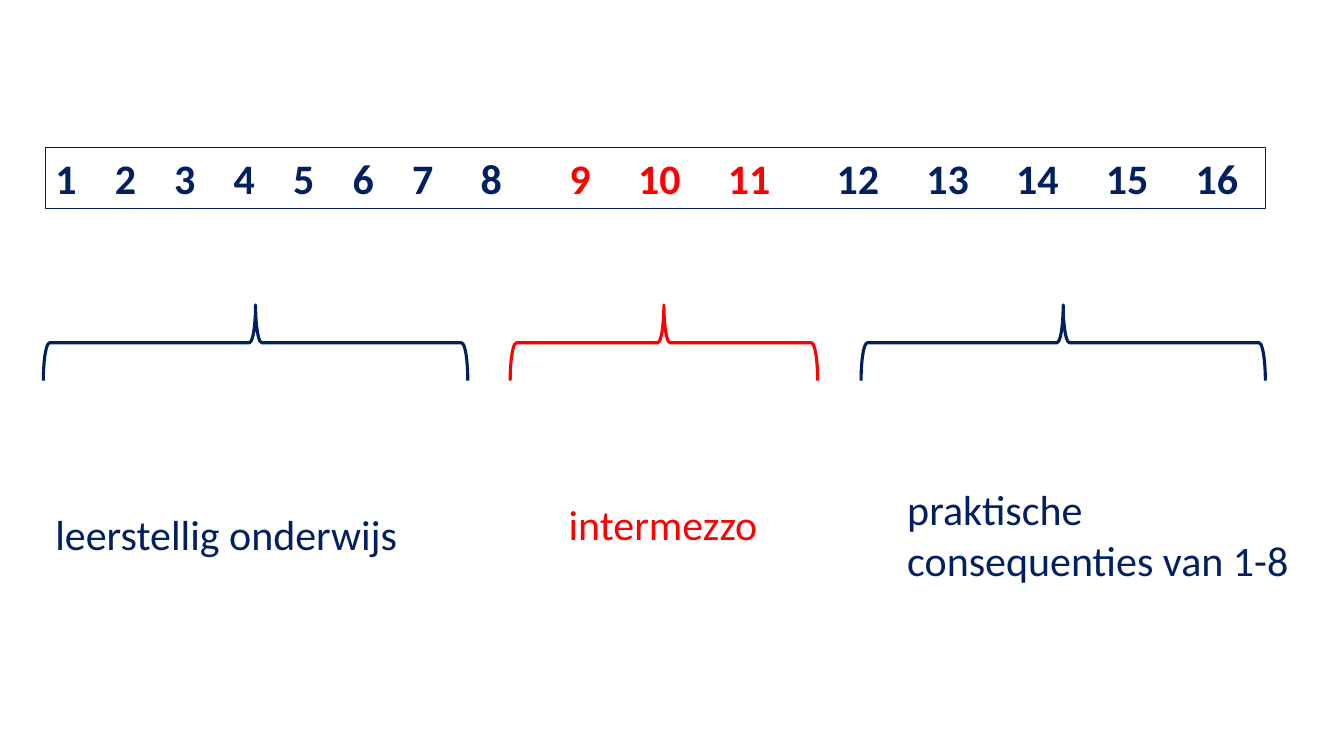
from lxml import etree
from pptx import Presentation
from pptx.dml.color import RGBColor
from pptx.enum.shapes import MSO_SHAPE
from pptx.enum.text import MSO_ANCHOR, PP_ALIGN
from pptx.oxml.ns import qn
from pptx.util import Inches, Pt

RECT, BRACE = MSO_SHAPE.RECTANGLE, MSO_SHAPE.RIGHT_BRACE
LEFT, TOP = PP_ALIGN.LEFT, MSO_ANCHOR.TOP
NAVY = RGBColor(0x00, 0x20, 0x60)
RED = RGBColor(0xFF, 0x00, 0x00)


def add_shape(kind, left, top, width, height, color, weight):
    shape = slide.shapes.add_shape(
        kind, Inches(left), Inches(top), Inches(width), Inches(height))
    shape.shadow.inherit = False
    shape.fill.background()
    shape.line.color.rgb = color
    shape.line.width = Pt(weight)
    return shape


def style(run, color, bold=False):
    run.font.name = "Calibri"
    run.font.size = Pt(30)
    run.font.bold = bold
    run.font.color.rgb = color


prs = Presentation()
prs.slide_width, prs.slide_height = Inches(13.33), Inches(7.5)
slide = prs.slides.add_slide(prs.slide_layouts[6])

# Row of chapter numbers, spaced by tab stops
bar = add_shape(RECT, 0.45, 1.46, 12.1, 0.61, NAVY, 0.75)
frame = bar.text_frame
frame.vertical_anchor = TOP
para = frame.paragraphs[0]
para.alignment = LEFT
for first, last, color in [(1, 8, NAVY), (9, 11, RED), (12, 16, NAVY)]:
    run = para.add_run()
    run.text = "\t".join(str(n) for n in range(first, last + 1))
    if last < 16:
        run.text += "\t"
    style(run, color, True)

steps = [0.59] * 6 + [0.68, 0.88, 0.68, 0.89, 1.08] + [0.89] * 4
tabs = etree.SubElement(para._p.get_or_add_pPr(), qn("a:tabLst"))
stop = 0
for step in steps:
    stop += step
    etree.SubElement(tabs, qn("a:tab"), pos=str(Inches(stop)), algn="l")

# Braces: left edge, span, colour; labels: text, left, top, width, height
parts = [
    (0.43, 4.21, NAVY, "leerstellig onderwijs", 0.45, 5, 3.88, 0.61),
    (5.06, 3.05, RED, "intermezzo", 5.54, 4.9, 2.09, 0.61),
    (8.54, 4.01, NAVY, "praktische consequenties van 1-8", 8.9, 4.75, 4.04, 1.11),
]
DEPTH, MID = 0.75, 3.4
for start, span, color, text, left, top, width, height in parts:
    # The upright brace is turned about its centre
    brace = add_shape(BRACE, start + (span - DEPTH) / 2, MID - span / 2,
                      DEPTH, span, color, 2.25)
    brace.rotation = 270

    label = slide.shapes.add_textbox(
        Inches(left), Inches(top), Inches(width), Inches(height))
    label.text_frame.word_wrap = True
    label.text_frame.text = text
    style(label.text_frame.paragraphs[0].runs[0], color)

prs.save("out.pptx")
